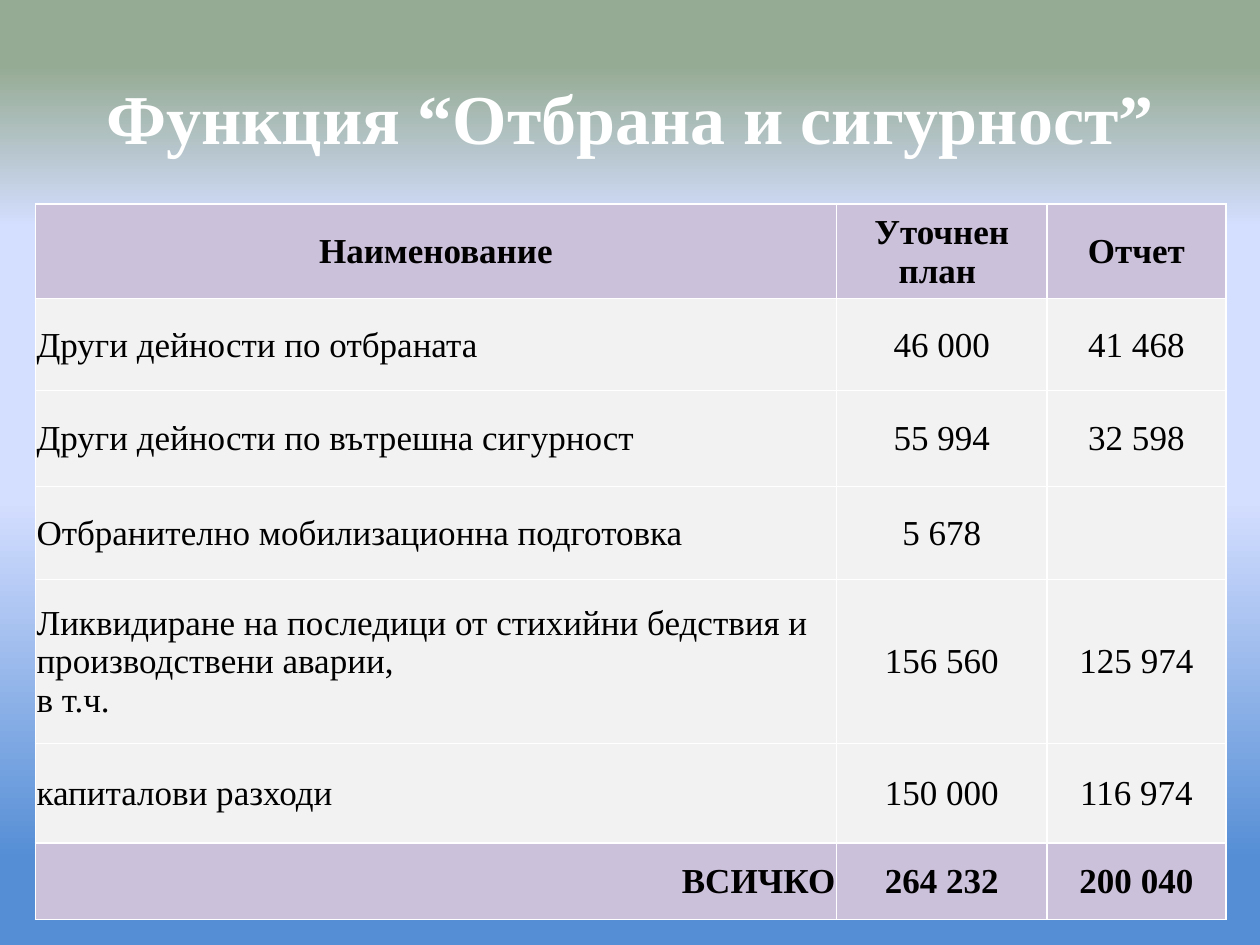
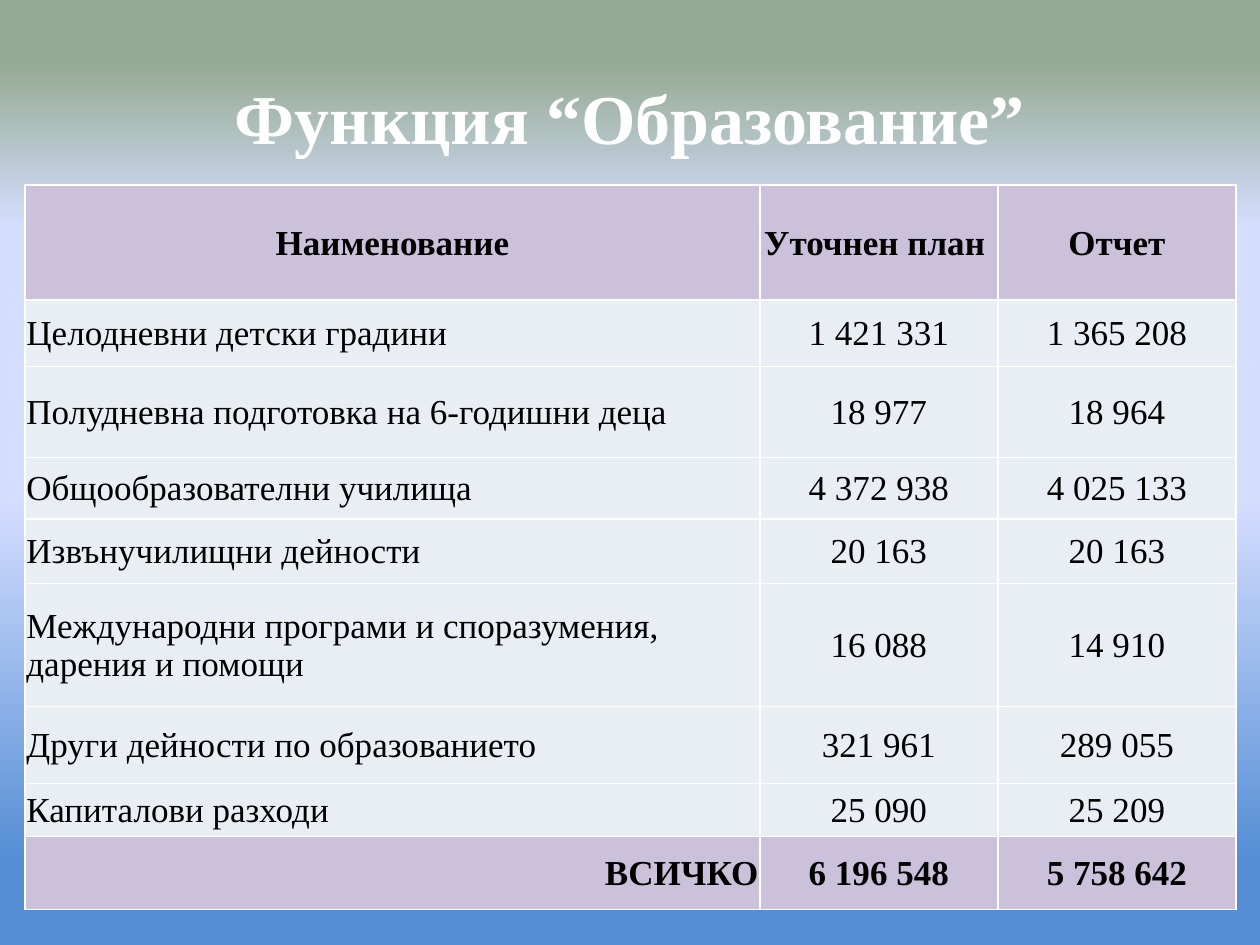
import pptx
import pptx.dml.color
import pptx.enum.text
import pptx.oxml
import pptx.oxml.ns
import pptx.util
import lxml.etree

Inches = pptx.util.Inches
Align = pptx.enum.text.PP_ALIGN
Middle = pptx.enum.text.MSO_ANCHOR.MIDDLE
qn = pptx.oxml.ns.qn

# Shared look
FONT = "Times New Roman"
WHITE, BLACK, ACCENT = "FFFFFF", "000000", "CCC1DA"
BACKGROUND = [(9, "558ED5"), (47, "D4DEFF"), (76, "D4DEFF"), (93, "96AB94")]
HEADER = ("Наименование", "Уточнен план ", "Отчет")

# Each table: title, place, column widths, row heights, body colour, rows
slides = [
    {
        "title": "Функция “Отбрана и сигурност”",
        "left": 0.28, "top": 1.62, "body": "F2F2F2",
        "widths": [6.36, 1.67, 1.42],
        "heights": [0.75, 0.73, 0.76, 0.74, 1.3, 0.79, 0.61],
        "rows": [
            ("Други дейности по отбраната", "46 000", "41 468"),
            ("Други дейности по вътрешна сигурност", "55 994", "32 598"),
            ("Отбранително мобилизационна подготовка", "5 678", ""),
            ("Ликвидиране на последици от стихийни бедствия и "
             "производствени аварии,\nв т.ч.", "156 560", "125 974"),
            ("капиталови разходи", "150 000", "116 974"),
            ("ВСИЧКО", "264 232", "200 040"),
        ],
    },
    {
        "title": "Функция “Образование”",
        "left": 0.2, "top": 1.47, "body": "E9EDF4",
        "widths": [5.83, 1.89, 1.89],
        "heights": [0.91, 0.53, 0.72, 0.49, 0.51, 0.98, 0.61, 0.42, 0.58],
        "rows": [
            ("Целодневни детски градини", "1 421 331", "1 365 208"),
            ("Полудневна подготовка на 6-годишни деца", "18 977", "18 964"),
            ("Общообразователни училища", "4 372 938", "4 025 133"),
            ("Извънучилищни дейности", "20 163", "20 163"),
            ("Международни програми и споразумения, дарения и помощи",
             "16 088", "14 910"),
            ("Други дейности по образованието", "321 961", "289 055"),
            ("Капиталови разходи", "25 090", "25 209"),
            ("ВСИЧКО", "6 196 548", "5 758 642"),
        ],
    },
]


def color(value):
    return pptx.dml.color.RGBColor.from_string(value)


def write(frame, text, size, hue, bold, align):
    """Fill a text frame, one paragraph per line of text."""
    for index, line in enumerate(text.split("\n")):
        para = frame.paragraphs[0] if index == 0 else frame.add_paragraph()
        para.alignment = align
        span = para.add_run()
        span.text = line
        span.font.name = FONT
        span.font.size = pptx.util.Pt(size)
        span.font.bold = bold
        span.font.color.rgb = color(hue)


deck = pptx.Presentation()
deck.slide_width, deck.slide_height = Inches(10), Inches(7.5)

for content in slides:
    page = deck.slides.add_slide(deck.slide_layouts[6])

    # Background gradient, running upwards
    fill = page.background.fill
    fill.gradient()
    fill.gradient_angle = 90
    stops = page.element.find(".//" + qn("a:gsLst"))
    for stop in list(stops):
        stops.remove(stop)
    for position, hue in BACKGROUND:
        stop = lxml.etree.SubElement(stops, qn("a:gs"), pos=str(position * 1000))
        lxml.etree.SubElement(stop, qn("a:srgbClr"), val=hue)

    # Title
    box = page.shapes.add_textbox(Inches(0.5), Inches(0.3), Inches(9), Inches(1.25))
    box.text_frame.word_wrap = True
    box.text_frame.vertical_anchor = Middle
    write(box.text_frame, content["title"], 40, WHITE, True, Align.CENTER)

    # Table grid
    rows = [HEADER] + content["rows"]
    widths, heights = content["widths"], content["heights"]
    table = page.shapes.add_table(
        len(rows), len(widths), Inches(content["left"]), Inches(content["top"]),
        Inches(sum(widths)), Inches(sum(heights))).table
    table.first_row = table.horz_banding = False
    for column, width in zip(table.columns, widths):
        column.width = Inches(width)
    for row, height in zip(table.rows, heights):
        row.height = Inches(height)

    # Cells: the header and total rows are bold on the accent colour
    for r, values in enumerate(rows):
        is_total = r == len(rows) - 1
        strong = r == 0 or is_total
        for c, value in enumerate(values):
            cell = table.cell(r, c)
            cell.vertical_anchor = Middle
            cell.margin_left = cell.margin_top = cell.margin_right = Inches(0.01)
            cell.margin_bottom = 0
            if c > 0 or r == 0:
                align = Align.CENTER
            else:
                align = Align.RIGHT if is_total else Align.LEFT
            if value:
                write(cell.text_frame, value, 20, BLACK, strong, align)

            # Borders come before the fill in the cell properties
            properties = cell._tc.get_or_add_tcPr()
            for side in ("a:lnL", "a:lnR", "a:lnT", "a:lnB"):
                line = lxml.etree.SubElement(properties, qn(side), w="12700")
                paint = lxml.etree.SubElement(line, qn("a:solidFill"))
                lxml.etree.SubElement(paint, qn("a:srgbClr"), val=WHITE)
            cell.fill.solid()
            cell.fill.fore_color.rgb = color(ACCENT if strong else content["body"])

deck.save("out.pptx")
